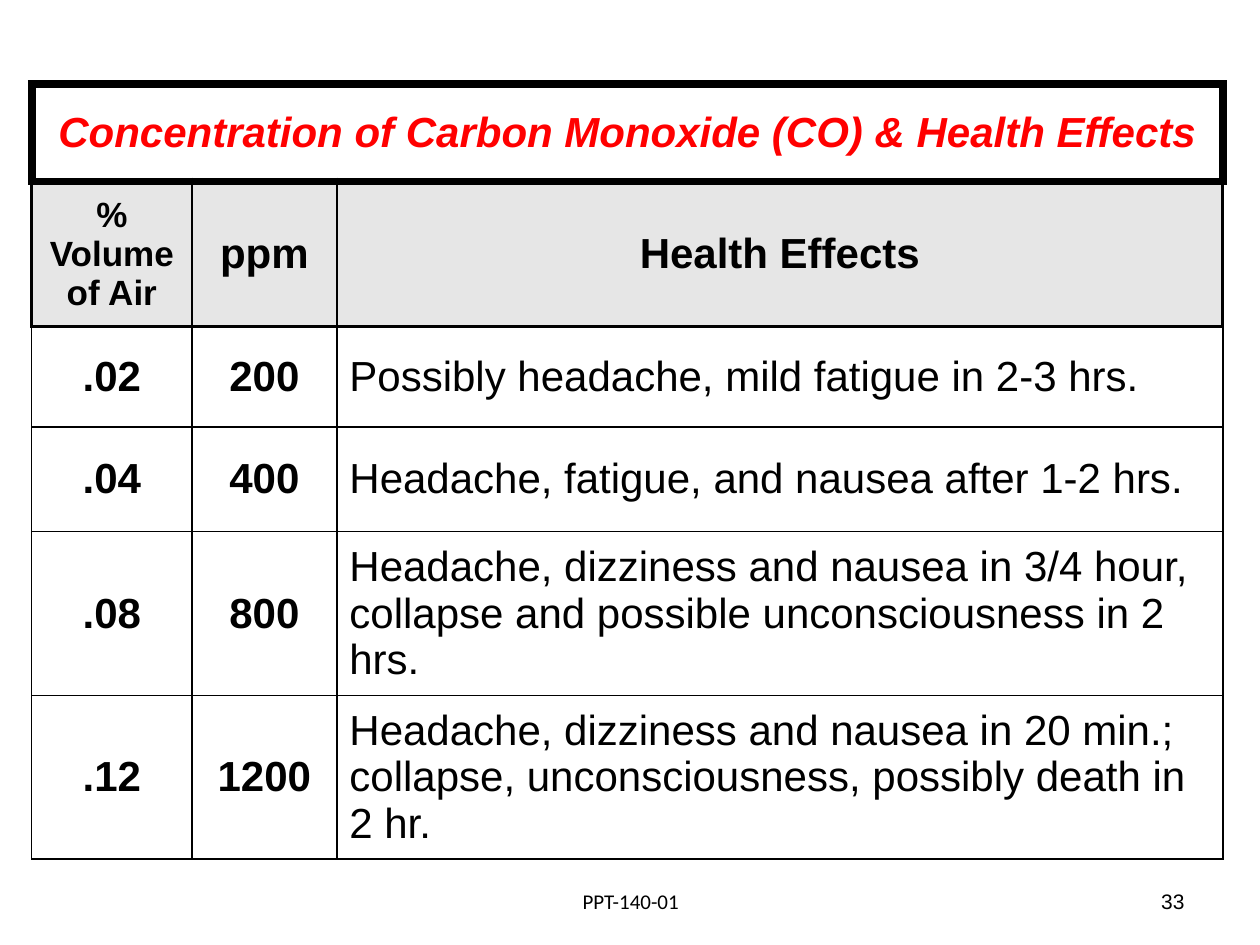
from dataclasses import dataclass

from lxml import etree
from pptx import Presentation
from pptx.dml.color import RGBColor
from pptx.enum.text import MSO_ANCHOR, PP_ALIGN
from pptx.oxml.ns import qn
from pptx.util import Cm, Pt

BLACK = RGBColor(0x00, 0x00, 0x00)
RED = RGBColor(0xFF, 0x00, 0x00)
GREY = RGBColor(0xE6, 0xE6, 0xE6)
LEFT, CENTER, RIGHT = PP_ALIGN.LEFT, PP_ALIGN.CENTER, PP_ALIGN.RIGHT
MIDDLE = MSO_ANCHOR.MIDDLE

COLUMN_WIDTHS = (3.23, 2.92, 17.86)
ROW_HEIGHTS = (1.96, 2.92, 2.03, 2.11, 3.3, 3.3)
THIN, MEDIUM, THICK = 1, 2, 5
TITLE = "Concentration of Carbon Monoxide (CO) & Health Effects"
HEADINGS = ("% Volume of Air", "ppm", "Health Effects")


@dataclass
class Exposure:
    volume: str
    ppm: str
    effects: str


@dataclass
class FooterItem:
    text: str
    left: float
    width: float
    font: str
    align: PP_ALIGN


EXPOSURES = (
    Exposure(".02", "200", "Possibly headache, mild fatigue in 2-3 hrs."),
    Exposure(".04", "400", "Headache, fatigue, and nausea after 1-2 hrs."),
    Exposure(".08", "800", "Headache, dizziness and nausea in 3/4 hour, "
             "collapse and possible unconsciousness in 2 hrs."),
    Exposure(".12", "1200", "Headache, dizziness and nausea in 20 min.; "
             "collapse, unconsciousness, possibly death in 2 hr."),
)
FOOTER = (
    FooterItem("PPT-140-01", 8.69, 8.05, "Calibri", CENTER),
    FooterItem("33", 18.21, 5.92, "Arial", RIGHT),
)


def write_text(frame, text: str, *, size: float = 24, font: str = "Arial",
               color: RGBColor = BLACK, bold: bool = False,
               italic: bool = False, align: PP_ALIGN = CENTER) -> None:
    frame.word_wrap = True
    para = frame.paragraphs[0]
    para.alignment = align
    span = para.add_run()
    span.text = text
    span.font.size = Pt(size)
    span.font.name = font
    span.font.color.rgb = color
    span.font.bold = bold
    span.font.italic = italic


def set_borders(cell, left: float, right: float, top: float,
                bottom: float) -> None:
    """Draw the four cell borders; must run before the cell is filled."""
    properties = cell._tc.get_or_add_tcPr()
    for side, width in zip("LRTB", (left, right, top, bottom)):
        line = etree.SubElement(properties, qn(f"a:ln{side}"), w=str(Pt(width)))
        fill = etree.SubElement(line, qn("a:solidFill"))
        etree.SubElement(fill, qn("a:srgbClr"), val=str(BLACK))


def frame_cell(cell, row: int, column: int) -> None:
    """Thick title box, medium outline round the headings, thin grid below."""
    last = len(COLUMN_WIDTHS) - 1
    if row == 0:
        set_borders(cell, THICK, THICK, THICK, THICK)
    elif row == 1:
        set_borders(cell, MEDIUM if column == 0 else THIN,
                    MEDIUM if column == last else THIN, THICK, MEDIUM)
    else:
        set_borders(cell, THIN, THIN, MEDIUM if row == 2 else THIN, THIN)
    if row == 1:
        cell.fill.solid()
        cell.fill.fore_color.rgb = GREY
    else:
        cell.fill.background()
    cell.vertical_anchor = MIDDLE


def add_effects_table(page) -> None:
    table = page.shapes.add_table(
        len(ROW_HEIGHTS), len(COLUMN_WIDTHS), Cm(0.64), Cm(1.7),
        Cm(sum(COLUMN_WIDTHS)), Cm(sum(ROW_HEIGHTS))).table
    table.first_row = table.horz_banding = False
    for column, width in zip(table.columns, COLUMN_WIDTHS):
        column.width = Cm(width)
    for row, height in zip(table.rows, ROW_HEIGHTS):
        row.height = Cm(height)
    for row in range(len(ROW_HEIGHTS)):
        for column in range(len(COLUMN_WIDTHS)):
            frame_cell(table.cell(row, column), row, column)

    # Title row across all columns
    title = table.cell(0, 0)
    title.merge(table.cell(0, len(COLUMN_WIDTHS) - 1))
    write_text(title.text_frame, TITLE, color=RED, bold=True, italic=True)

    # Column headings
    for column, heading in enumerate(HEADINGS):
        write_text(table.cell(1, column).text_frame, heading,
                   size=20 if column == 0 else 24, bold=True)

    # Exposure levels
    for row, exposure in enumerate(EXPOSURES, start=2):
        write_text(table.cell(row, 0).text_frame, exposure.volume, bold=True)
        write_text(table.cell(row, 1).text_frame, exposure.ppm, bold=True)
        write_text(table.cell(row, 2).text_frame, exposure.effects, align=LEFT)


def add_footer_item(page, item: FooterItem) -> None:
    box = page.shapes.add_textbox(Cm(item.left), Cm(17.65), Cm(item.width),
                                  Cm(1.02))
    box.text_frame.vertical_anchor = MIDDLE
    write_text(box.text_frame, item.text, size=12, font=item.font,
               align=item.align)


def main() -> None:
    deck = Presentation()
    deck.slide_width, deck.slide_height = Cm(25.4), Cm(19.05)
    page = deck.slides.add_slide(deck.slide_layouts.get_by_name("Blank"))
    add_effects_table(page)
    for item in FOOTER:
        add_footer_item(page, item)
    deck.save("out.pptx")


if __name__ == "__main__":
    main()
